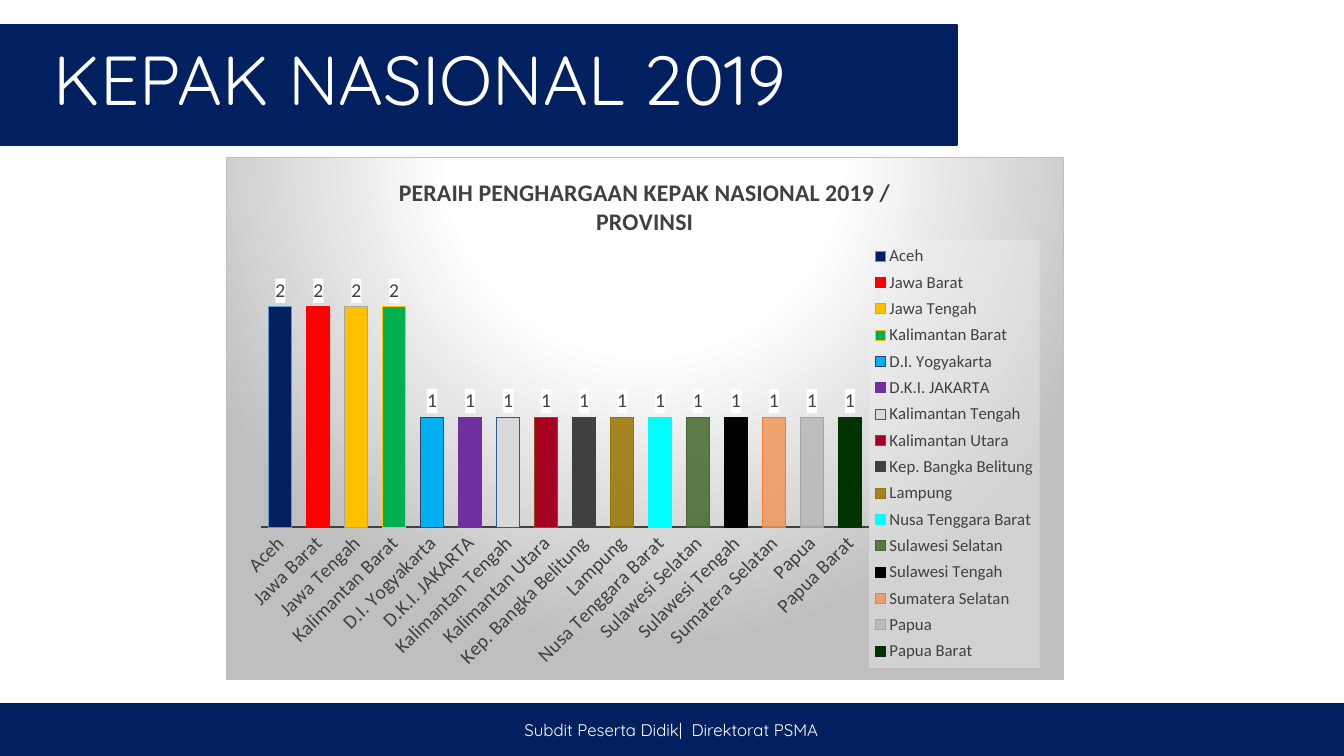
from dataclasses import dataclass

from lxml import etree
from pptx import Presentation
from pptx.chart.data import CategoryChartData
from pptx.dml.color import RGBColor
from pptx.enum.chart import XL_CHART_TYPE as ChartType, XL_LABEL_POSITION as LabelPos
from pptx.enum.chart import XL_LEGEND_POSITION as LegendPos, XL_TICK_MARK as TickMark
from pptx.enum.shapes import MSO_SHAPE as Preset
from pptx.enum.text import MSO_ANCHOR as Anchor, MSO_AUTO_SIZE as AutoSize, PP_ALIGN as Align
from pptx.oxml import parse_xml
from pptx.oxml.ns import qn
from pptx.util import Inches, Pt

NAVY = RGBColor(0x00, 0x20, 0x60)
WHITE = RGBColor(0xFF, 0xFF, 0xFF)
CHARCOAL = RGBColor(0x40, 0x40, 0x40)
SILVER = RGBColor(0xBF, 0xBF, 0xBF)
PALE = RGBColor(0xF2, 0xF2, 0xF2)
HEADING_FONT, CHART_FONT = "Quicksand", "Calibri"
SLIDE_W, SLIDE_H = Inches(13.33), Inches(7.5)
NAMESPACES = ('xmlns:c="http://schemas.openxmlformats.org/drawingml/2006/chart" '
              'xmlns:a="http://schemas.openxmlformats.org/drawingml/2006/main"')


@dataclass(frozen=True)
class Area:
    """A rectangle in percent of the slide or of the chart."""
    left: float
    top: float
    width: float
    height: float

    def on_slide(self) -> tuple[int, int, int, int]:
        return (int(SLIDE_W * self.left / 100), int(SLIDE_H * self.top / 100),
                int(SLIDE_W * self.width / 100), int(SLIDE_H * self.height / 100))


@dataclass(frozen=True)
class Province:
    name: str
    awards: int
    fill: RGBColor
    edge: RGBColor
    opacity: int = 100


def province(name: str, awards: int, fill: str, edge: str = "", opacity: int = 100) -> Province:
    return Province(name, awards, RGBColor.from_string(fill),
                    RGBColor.from_string(edge or fill), opacity)


BANNER = Area(0, 3.33, 71.2, 15.87)
HEADING = Area(3.23, 6.4, 67.97, 9.73)
FOOTER = Area(-0.08, 93.07, 100.08, 6.93)
CHART = Area(16.8, 20.8, 62.34, 69.2)
PLOT = Area(4.2, 18, 72.6, 52.8)
LEGEND = Area(76.8, 15.7, 20.4, 82)
CHART_TITLE = ["PERAIH PENGHARGAAN KEPAK NASIONAL 2019 /", "PROVINSI"]

PROVINCES = [
    province("Aceh", 2, "002060", "5B9BD5"),
    province("Jawa Barat", 2, "FF0000"),
    province("Jawa Tengah", 2, "FFC000", "A5A5A5"),
    province("Kalimantan Barat", 2, "00B050", "FFC000"),
    province("D.I. Yogyakarta", 1, "00B0F0", "264478"),
    province("D.K.I. JAKARTA", 1, "7030A0"),
    province("Kalimantan Tengah", 1, "D9D9D9", "255E91"),
    province("Kalimantan Utara", 1, "A50021", "9E480E"),
    province("Kep. Bangka Belitung", 1, "404040"),
    province("Lampung", 1, "997300", opacity=85),
    province("Nusa Tenggara Barat", 1, "00FFFF"),
    province("Sulawesi Selatan", 1, "43682B", opacity=85),
    province("Sulawesi Tengah", 1, "000000"),
    province("Sumatera Selatan", 1, "F1975A", "ED7D31", 85),
    province("Papua", 1, "B7B7B7", "A5A5A5", 85),
    province("Papua Barat", 1, "003300"),
]


def add_bar(slide, area: Area):
    bar = slide.shapes.add_shape(Preset.RECTANGLE, *area.on_slide())
    bar.shadow.inherit = False
    bar.fill.solid()
    bar.fill.fore_color.rgb = NAVY
    bar.line.color.rgb = NAVY
    bar.line.width = Pt(1)
    return bar


def style_font(font, face: str, size: float, color: RGBColor, bold: bool = False) -> None:
    font.name, font.size, font.bold = face, Pt(size), bold
    font.color.rgb = color


def write(frame, text: str, size: float, align: Align, anchor: Anchor) -> None:
    frame.word_wrap = True
    frame.auto_size = AutoSize.NONE
    frame.vertical_anchor = anchor
    line = frame.paragraphs[0]
    line.alignment = align
    run = line.add_run()
    run.text = text
    style_font(run.font, HEADING_FONT, size, WHITE)


def solid_fill(color: RGBColor, opacity: int = 100):
    return parse_xml(f'<c:spPr {NAMESPACES}><a:solidFill><a:srgbClr val="{color}">'
                     f'<a:alpha val="{opacity * 1000}"/></a:srgbClr></a:solidFill></c:spPr>')


def halo_fill():
    stops = "".join(f'<a:gs pos="{place * 1000}"><a:srgbClr val="{color}"/></a:gs>'
                    for place, color in ((0, WHITE), (39, WHITE), (100, SILVER)))
    return parse_xml(
        f'<c:spPr {NAMESPACES}><a:gradFill><a:gsLst>{stops}</a:gsLst><a:path path="circle">'
        '<a:fillToRect l="50000" t="-80000" r="50000" b="180000"/></a:path></a:gradFill>'
        f'<a:ln w="{Pt(0.75)}"><a:solidFill><a:srgbClr val="{SILVER}"/></a:solidFill></a:ln>'
        '</c:spPr>')


def manual_layout(area: Area, inner: bool = False):
    target = '<c:layoutTarget val="inner"/>' if inner else ""
    sizes = "".join(f'<c:{tag} val="{share / 100:.3f}"/>' for tag, share in
                    zip("xywh", (area.left, area.top, area.width, area.height)))
    return parse_xml(f'<c:layout {NAMESPACES}><c:manualLayout>{target}<c:xMode val="edge"/>'
                     f'<c:yMode val="edge"/>{sizes}</c:manualLayout></c:layout>')


def drop_layout(parent) -> None:
    for layout in parent.findall(qn("c:layout")):
        parent.remove(layout)


def style_title(chart) -> None:
    frame = chart.chart_title.text_frame
    for index, text in enumerate(CHART_TITLE):
        line = frame.add_paragraph() if index else frame.paragraphs[0]
        run = line.add_run()
        run.text = text
        style_font(run.font, CHART_FONT, 17, CHARCOAL, bold=True)


def style_axes(chart) -> None:
    names, awards = chart.category_axis, chart.value_axis
    names.major_tick_mark = names.minor_tick_mark = TickMark.NONE
    names.format.line.color.rgb = CHARCOAL
    names.format.line.width = Pt(1.5)
    style_font(names.tick_labels.font, CHART_FONT, 14, CHARCOAL)
    names._element.find(qn("c:txPr")).find(qn("a:bodyPr")).set("rot", "-2700000")
    awards.visible = False
    awards.has_major_gridlines = False
    awards.minimum_scale, awards.maximum_scale = 0, 2.5


def style_columns(plot) -> None:
    plot.gap_width = 65
    plot.vary_by_categories = True
    for index, item in enumerate(PROVINCES):
        column = plot.series[0].points[index].format
        column.fill.solid()
        column.fill.fore_color.rgb = item.fill
        column.line.color.rgb = item.edge
        column.line.width = Pt(0.75)
        if item.opacity < 100:
            tint = plot.series[0].points[index]._element.findall(
                f"{qn('c:dPt')}/{qn('c:spPr')}/{qn('a:solidFill')}/{qn('a:srgbClr')}")[-1]
            etree.SubElement(tint, qn("a:alpha"), val=str(item.opacity * 1000))
    labels = plot.series[0].data_labels
    labels.show_value = True
    labels.position = LabelPos.OUTSIDE_END
    style_font(labels.font, CHART_FONT, 14, CHARCOAL)
    labels._element.find(qn("c:txPr")).addprevious(solid_fill(WHITE))


def style_legend(chart) -> None:
    chart.has_legend = True
    legend = chart.legend
    legend.position = LegendPos.RIGHT
    legend.include_in_layout = False
    style_font(legend.font, CHART_FONT, 12, CHARCOAL)
    drop_layout(legend._element)
    legend._element.find(qn("c:legendPos")).addnext(manual_layout(LEGEND))
    legend._element.find(qn("c:txPr")).addprevious(solid_fill(PALE, 39))


def add_awards_chart(slide) -> None:
    data = CategoryChartData()
    data.categories = [item.name for item in PROVINCES]
    data.add_series("Series 1", [item.awards for item in PROVINCES])
    chart = slide.shapes.add_chart(ChartType.COLUMN_CLUSTERED, *CHART.on_slide(), data).chart
    style_font(chart.font, CHART_FONT, 14, RGBColor(0, 0, 0))
    style_title(chart)
    style_axes(chart)
    style_columns(chart.plots[0])
    style_legend(chart)
    body = chart._chartSpace.find(qn("c:chart"))
    body.addnext(halo_fill())
    plot_area = body.find(qn("c:plotArea"))
    drop_layout(plot_area)
    plot_area.insert(0, manual_layout(PLOT, inner=True))


def main() -> None:
    deck = Presentation()
    deck.slide_width, deck.slide_height = SLIDE_W, SLIDE_H
    slide = deck.slides.add_slide(deck.slide_layouts[5])

    # Navy bars, kept behind the heading
    heading = slide.shapes.title
    for area in (BANNER, FOOTER):
        heading._element.addprevious(add_bar(slide, area)._element)

    # Heading and footer text
    heading.left, heading.top, heading.width, heading.height = HEADING.on_slide()
    write(heading.text_frame, "KEPAK NASIONAL 2019", 49.5, Align.LEFT, Anchor.BOTTOM)
    heading.text_frame.paragraphs[0].line_spacing = 0.7
    footer = slide.shapes.add_textbox(*FOOTER.on_slide())
    write(footer.text_frame, "Subdit Peserta Didik|  Direktorat PSMA", 12,
          Align.CENTER, Anchor.MIDDLE)

    # Awards by province
    add_awards_chart(slide)
    deck.save("out.pptx")


if __name__ == "__main__":
    main()
